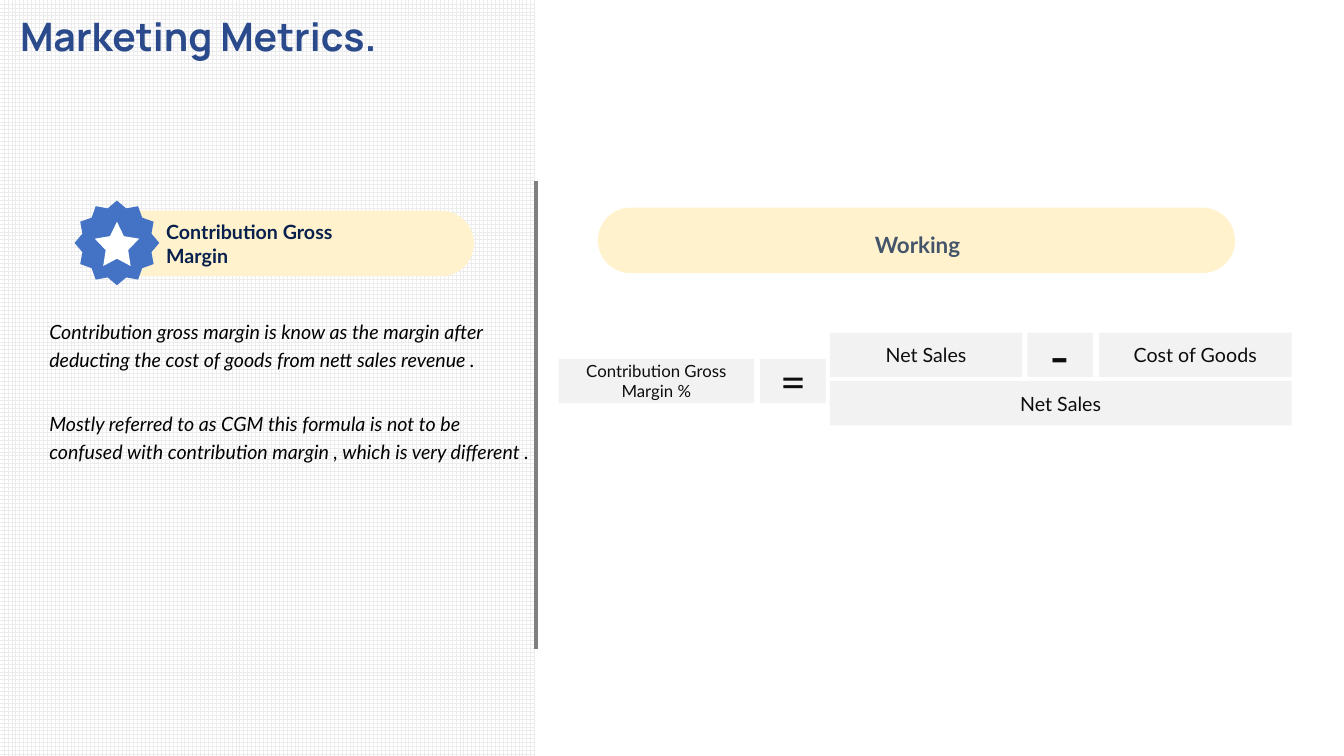
from lxml.etree import SubElement
from pptx import Presentation
from pptx.dml.color import RGBColor
from pptx.enum.dml import MSO_PATTERN
from pptx.enum.shapes import MSO_CONNECTOR, MSO_SHAPE as Preset
from pptx.enum.text import MSO_ANCHOR as Anchor, PP_ALIGN as Align
from pptx.oxml.ns import qn
from pptx.util import Pt

EMU_PER_PX = 9144  # 100 px to the inch

COLORS = {
    "white": "FFFFFF",
    "grid": "ECECEC",
    "title": "2A4A8B",
    "heading": "08204D",
    "body": "000000",
    "working": "44546A",
    "divider": "808080",
    "pill": "FFF2CC",
    "badge": "4472C4",
    "cell": "F2F2F2",
    "cell_text": "0D0D0D",
}

CELL_HEIGHT = 44
NUMERATOR_TOP, RESULT_TOP, DENOMINATOR_TOP = 330, 356, 378
EQUATION_CELLS = [  # text, left, top, width, font size
    ("Contribution Gross Margin %", 554, RESULT_TOP, 194, 12),
    ("=", 754, RESULT_TOP, 65, 32),
    ("Net Sales", 823, NUMERATOR_TOP, 191, 14),
    ("-", 1019, NUMERATOR_TOP, 65, 40),
    ("Cost of Goods", 1090, NUMERATOR_TOP, 191, 14),
    ("Net Sales", 823, DENOMINATOR_TOP, 458, 14),
]

DEFINITION = [
    "Contribution gross margin is know as the margin after deducting "
    "the cost of goods from nett sales revenue .",
    "Mostly referred to as CGM this formula is not to be confused with "
    "contribution margin , which is very different .",
]


def px(*lengths):
    return [length * EMU_PER_PX for length in lengths]


def color(name):
    return RGBColor.from_string(COLORS[name])


def add_plain_shape(shapes, preset, area, fill, adjustments=()):
    shape = shapes.add_shape(preset, *px(*area))
    shape.shadow.inherit = False
    shape.line.fill.background()
    shape.fill.solid()
    shape.fill.fore_color.rgb = color(fill)
    for index, value in enumerate(adjustments):
        shape.adjustments[index] = value
    return shape


def write(shape, texts, size, ink, font="Lato", bold=False, italic=False,
          align=Align.LEFT, anchor=Anchor.TOP):
    """Fill the shape with one paragraph per text and return the paragraphs."""
    frame = shape.text_frame
    frame.word_wrap = True
    frame.vertical_anchor = anchor
    for index, text in enumerate(texts):
        paragraph = frame.add_paragraph() if index else frame.paragraphs[0]
        paragraph.text = text
        paragraph.alignment = align
        paragraph.font.name = font
        paragraph.font.size = Pt(size)
        paragraph.font.bold = bold
        paragraph.font.italic = italic
        paragraph.font.color.rgb = color(ink)
    return frame.paragraphs


def add_text(shapes, area, texts, size, ink, **style):
    return write(shapes.add_textbox(*px(*area)), texts, size, ink, **style)


def add_grid_panel(shapes):
    panel = add_plain_shape(shapes, Preset.RECTANGLE, (0, 0, 531, 750), "white")
    panel.fill.patterned()
    panel.fill.pattern = MSO_PATTERN.LARGE_GRID
    panel.fill.fore_color.rgb = color("grid")
    panel.fill.back_color.rgb = color("white")


def add_definition(shapes):
    paragraphs = add_text(shapes, (39, 308, 499, 159), DEFINITION, 14, "body",
                          italic=True)
    for index, paragraph in enumerate(paragraphs):
        paragraph.line_spacing = 1.2
        if index:
            paragraph.space_before = Pt(25)


def add_divider(shapes):
    divider = shapes.add_connector(MSO_CONNECTOR.STRAIGHT,
                                   *px(532, 180, 532, 644))
    divider.line.color.rgb = color("divider")
    divider.line.width = Pt(3)
    SubElement(divider._element.spPr, qn("a:effectLst"))


def add_pill(shapes, area):
    add_plain_shape(shapes, Preset.ROUNDED_RECTANGLE, area, "pill", [0.5])


def add_metric_heading(shapes):
    group = shapes.add_group_shape().shapes
    add_pill(group, (88, 209, 382, 65))
    add_plain_shape(group, Preset.STAR_12_POINT, (74, 199, 84, 84), "badge",
                    [0.422])
    add_plain_shape(group, Preset.STAR_5_POINT, (94, 220, 44, 44), "white",
                    [0.254])
    add_text(group, (155, 225, 248, 34), ["Contribution Gross Margin"], 14,
             "heading", bold=True, anchor=Anchor.MIDDLE)


def add_working_heading(shapes):
    group = shapes.add_group_shape().shapes
    add_pill(group, (593, 206, 632, 65))
    add_text(group, (619, 224, 582, 37), ["Working"], 16, "working", bold=True,
             align=Align.CENTER, anchor=Anchor.BOTTOM)


def add_equation(shapes):
    for text, left, top, width, size in EQUATION_CELLS:
        cell = add_plain_shape(shapes, Preset.RECTANGLE,
                               (left, top, width, CELL_HEIGHT), "cell")
        write(cell, [text], size, "cell_text", align=Align.CENTER,
              anchor=Anchor.MIDDLE)


def main():
    deck = Presentation()
    deck.slide_width, deck.slide_height = px(1333, 750)
    shapes = deck.slides.add_slide(deck.slide_layouts[6]).shapes
    add_grid_panel(shapes)
    add_text(shapes, (10, 7, 422, 57), ["Marketing Metrics."], 28, "title",
             font="Manrope", bold=True)
    add_definition(shapes)
    add_divider(shapes)
    add_metric_heading(shapes)
    add_working_heading(shapes)
    add_equation(shapes)
    deck.save("out.pptx")


if __name__ == "__main__":
    main()
